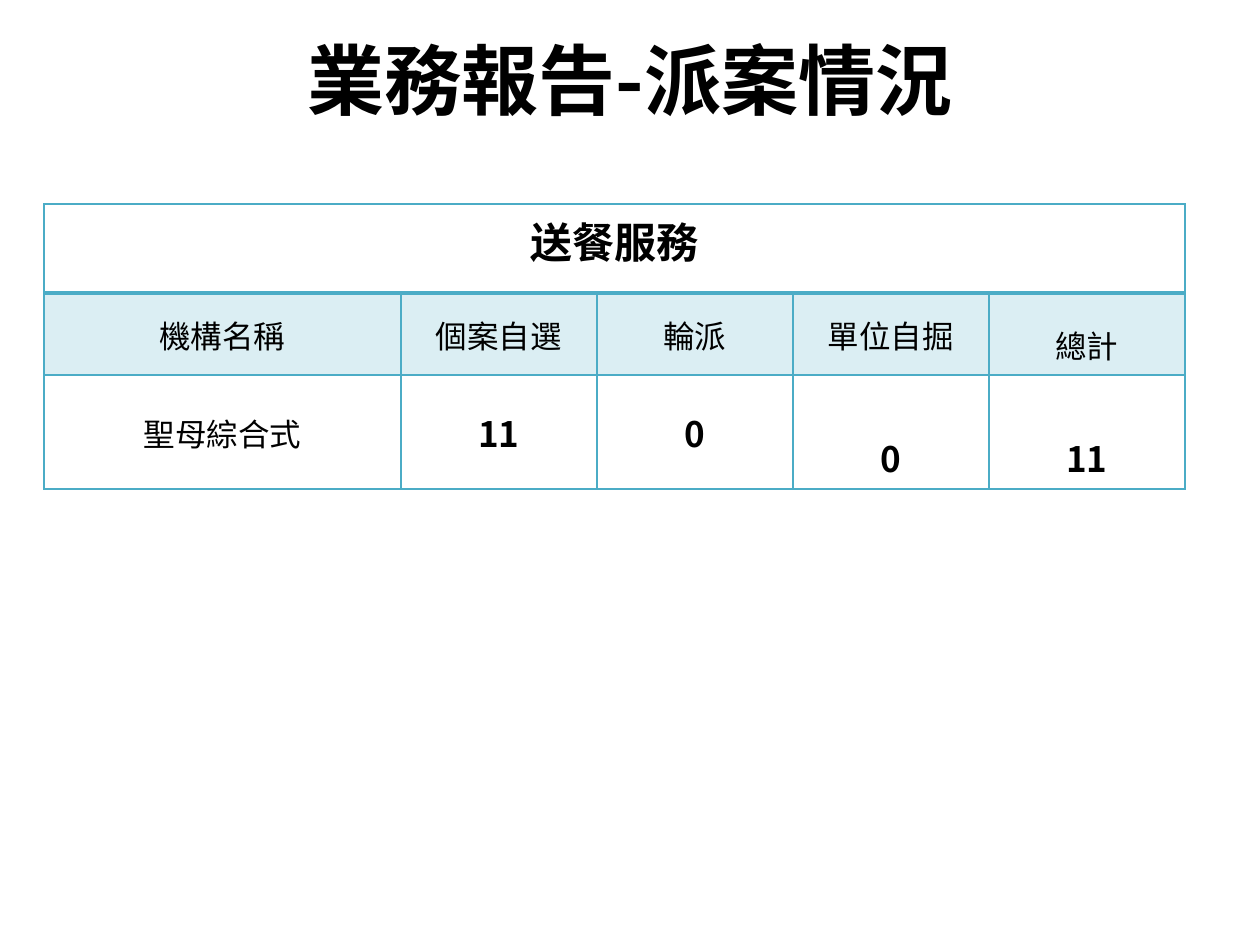
from lxml.etree import SubElement
from pptx import Presentation
from pptx.dml.color import RGBColor
from pptx.enum.text import MSO_ANCHOR as Anchor, PP_ALIGN as Align
from pptx.oxml.ns import qn
from pptx.util import Pt

FONT = "Noto Sans CJK SC"
BLACK = RGBColor(0x00, 0x00, 0x00)
TEAL = RGBColor(0x4B, 0xAC, 0xC6)
HEADER_ALPHA = 20000

TITLE = "業務報告-派案情況"
SERVICE = "送餐服務"
HEADERS = ["機構名稱", "個案自選", "輪派", "單位自掘", "總計"]
COUNTS = ["聖母綜合式", "11", "0", "0", "11"]
ROWS = [[SERVICE], HEADERS, COUNTS]
COLUMN_WIDTHS = [357, 196, 196, 196, 196]
ROW_HEIGHTS = [89, 82, 114]
TABLE_LEFT, TABLE_TOP = 44, 204


def px(value):
    return value * 914400 // 126


def write(frame, text, size, bold, spacing=None):
    paragraph = frame.paragraphs[0]
    paragraph.alignment = Align.CENTER
    if spacing:
        paragraph.line_spacing = spacing
    run = paragraph.add_run()
    run.text = text
    font = run.font
    font.name, font.size, font.bold = FONT, Pt(size), bold
    font.color.rgb = BLACK
    SubElement(run._r.get_or_add_rPr(), qn("a:ea"), typeface=FONT)


def add_borders(cell, top, bottom):
    properties = cell._tc.get_or_add_tcPr()
    for side, width in (("L", 1), ("R", 1), ("T", top), ("B", bottom)):
        line = SubElement(properties, qn(f"a:ln{side}"), w=str(Pt(width)))
        fill = SubElement(line, qn("a:solidFill"))
        SubElement(fill, qn("a:srgbClr"), val=str(TEAL))


def fill_cell(cell, is_header):
    if not is_header:
        cell.fill.background()
        return
    cell.fill.solid()
    cell.fill.fore_color.rgb = TEAL
    color = cell._tc.tcPr.find(qn("a:solidFill")).find(qn("a:srgbClr"))
    SubElement(color, qn("a:alpha"), val=str(HEADER_ALPHA))


def write_cell(cell, text, row, column):
    if row == 0:
        write(cell.text_frame, text, 24, True)
        return
    is_count = row == 2 and column > 0
    spaced_from = 4 if row == 1 else 3
    spacing = None
    if column >= spaced_from:
        spacing = 1.5 if row == 1 else 2.0
    else:
        cell.vertical_anchor = Anchor.MIDDLE
        cell.margin_left = cell.margin_right = cell.margin_top = px(1)
        cell.margin_bottom = 0
    write(cell.text_frame, text, 20 if is_count else 18, is_count, spacing)


def add_table(slide):
    shape = slide.shapes.add_table(
        len(ROWS), len(HEADERS), px(TABLE_LEFT), px(TABLE_TOP),
        px(sum(COLUMN_WIDTHS)), px(sum(ROW_HEIGHTS)))
    table = shape.table
    table.first_row = table.horz_banding = False
    for column, width in zip(table.columns, COLUMN_WIDTHS):
        column.width = px(width)
    for row, height in zip(table.rows, ROW_HEIGHTS):
        row.height = px(height)
    table.cell(0, 0).merge(table.cell(0, len(HEADERS) - 1))
    for row, texts in enumerate(ROWS):
        for column in range(len(HEADERS)):
            cell = table.cell(row, column)
            add_borders(cell, 2 if row == 1 else 1, 2 if row == 0 else 1)
            fill_cell(cell, row == 1)
        for column, text in enumerate(texts):
            write_cell(table.cell(row, column), text, row, column)


def add_title(slide):
    title = slide.shapes.add_textbox(px(63), 0, px(1134), px(158))
    frame = title.text_frame
    frame.word_wrap = True
    frame.vertical_anchor = Anchor.MIDDLE
    write(frame, TITLE, 44, True)


def main():
    presentation = Presentation()
    presentation.slide_width, presentation.slide_height = px(1260), px(945)
    slide = presentation.slides.add_slide(presentation.slide_layouts[6])
    add_table(slide)
    add_title(slide)
    presentation.save("out.pptx")


if __name__ == "__main__":
    main()
